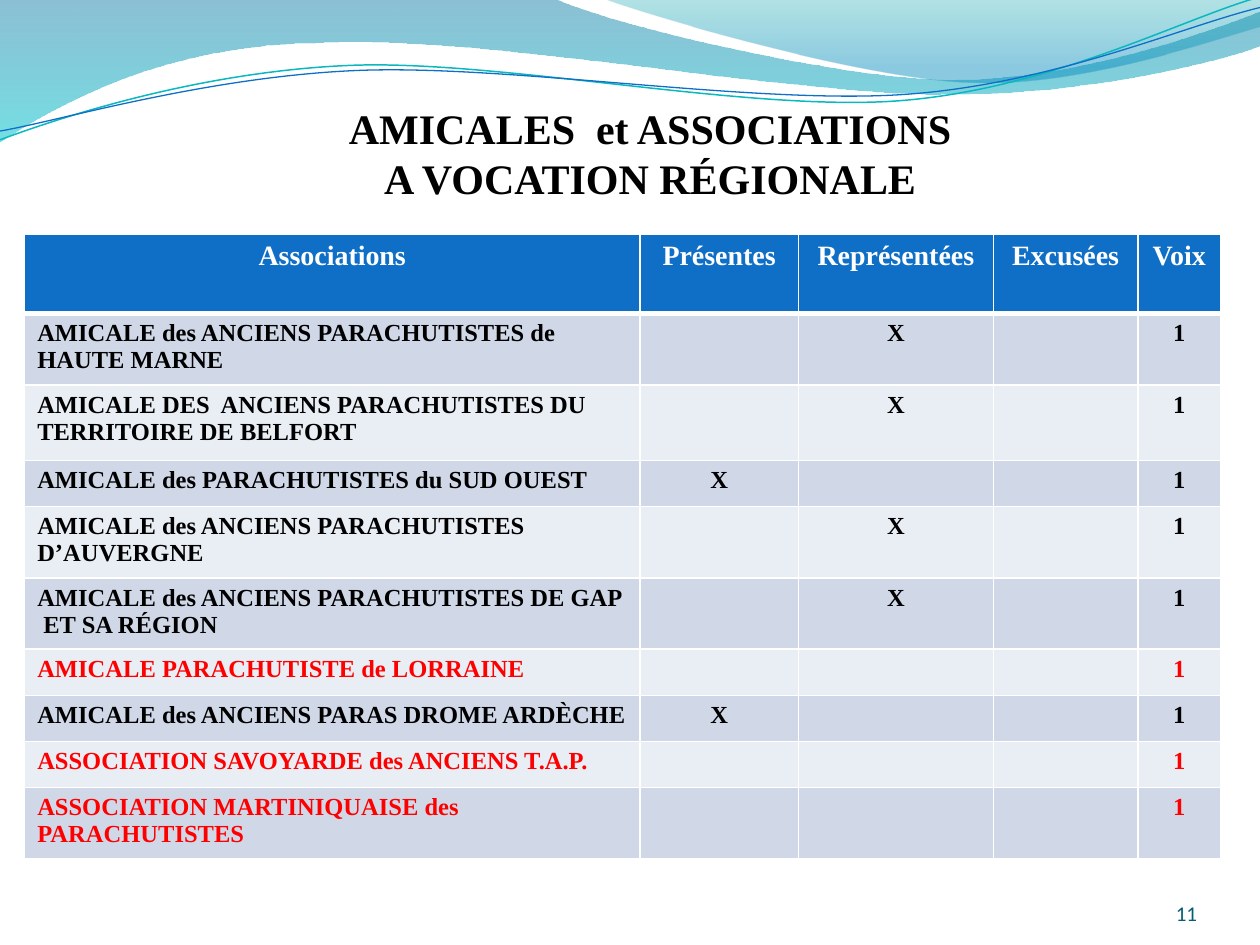
import math

import lxml.etree
import pptx
import pptx.dml.color
import pptx.enum.text
import pptx.oxml.ns
import pptx.util

Pt = pptx.util.Pt
ALIGN = pptx.enum.text.PP_ALIGN
ANCHOR = pptx.enum.text.MSO_ANCHOR
SERIF = "Times New Roman"
BLACK, WHITE, RED, BLUE = "000000", "FFFFFF", "FF0000", "0F6FC6"
BANDS = ("D0D8E8", "E9EDF4")

# Wave outlines in points: one pair ends a line, three pairs make a Bezier curve
BROAD_WAVE = [
    [(0, -0.7)], [(317, -0.7)],
    [(342.7, 12.2), (478, 45.4), (545.8, 45.4)],
    [(614.2, 45.4), (689.8, 18.7), (720, 6.5)], [(720.7, 25.9)],
    [(707.8, 31.7), (626.4, 54.7), (537.1, 54)],
    [(447.8, 54), (275, 20.2), (185, 24.5)],
    [(92.9, 25.2), (33.1, 59.8), (-0.7, 81.4)]]
RIGHT_WAVE = [
    [(344.9, -0.7)], [(366.5, 7.9), (491, 44.6), (553.7, 46.8)],
    [(616.3, 49.7), (691.9, 23), (720, 15.1)], [(720, 0)]]
TEAL_STRAND = [
    [(0, 79.9)], [(34.6, 67), (113.8, 41), (199.4, 37.4)],
    [(284.4, 33.8), (427, 64.1), (513.4, 57.6)],
    [(599.8, 51.1), (675.4, 10.8), (718.6, -1.4)]]
BLUE_STRAND = [
    [(0, 74.9)], [(33.8, 69.1), (118.1, 43.9), (203.8, 40.3)],
    [(290.2, 36.7), (429.8, 59.8), (516.2, 54)],
    [(601.9, 48.2), (675.4, 15.1), (720, 4.3)]]
STRAND_TILT = -2.7
STRAND_CENTER = (359.5, 41.5)

HEADINGS = ["Associations", "Présentes", "Représentées", "Excusées", "Voix"]
COLUMN_WIDTHS = [351.6, 90.6, 111.4, 82.6, 47.2]
HEADER_HEIGHT = 45.4
# Name, column of the cross (None when absent, shown in red), row height
ASSOCIATIONS = [
    ("AMICALE des ANCIENS PARACHUTISTES de HAUTE MARNE", 2, 40.7),
    ("AMICALE DES  ANCIENS PARACHUTISTES DU TERRITOIRE DE BELFORT", 2, 43.2),
    ("AMICALE des PARACHUTISTES du SUD OUEST", 1, 26.4),
    ("AMICALE des ANCIENS PARACHUTISTES D’AUVERGNE", 2, 40.7),
    ("AMICALE des ANCIENS PARACHUTISTES DE GAP  ET SA RÉGION", 2, 40.7),
    ("AMICALE PARACHUTISTE de LORRAINE", None, 26.4),
    ("AMICALE des ANCIENS PARAS DROME ARDÈCHE", 1, 26.4),
    ("ASSOCIATION SAVOYARDE des ANCIENS T.A.P.", None, 26.4),
    ("ASSOCIATION MARTINIQUAISE des PARACHUTISTES", None, 40.7),
]


def rgb(value):
    return pptx.dml.color.RGBColor.from_string(value)


def add_xml(parent, tag, **attributes):
    return lxml.etree.SubElement(parent, pptx.oxml.ns.qn(tag), attributes)


def apply(target, values):
    for name, value in values.items():
        setattr(target, name, value)


def write(paragraph, text, size, color, align, bold=True, font=SERIF):
    paragraph.alignment = align
    if not text:
        add_xml(paragraph._p, "a:endParaRPr", sz=str(size * 100))
        return
    run = paragraph.add_run()
    run.text = text
    apply(run.font, {"size": Pt(size), "bold": bold, "name": font})
    run.font.color.rgb = rgb(color)


def turn(point, degrees, center):
    angle = math.radians(degrees)
    dx, dy = point[0] - center[0], point[1] - center[1]
    return (center[0] + dx * math.cos(angle) - dy * math.sin(angle),
            center[1] + dx * math.sin(angle) + dy * math.cos(angle))


def add_outline(slide, segments, close):
    ends = [(Pt(x), Pt(y)) for x, y in (segment[-1] for segment in segments)]
    builder = slide.shapes.build_freeform(*ends[0])
    builder.add_line_segments(ends[1:], close=close)
    outline = builder.convert_to_shape()
    outline.shadow.inherit = False
    # Turn the straight segments that have control points into curves
    lines = list(outline._element.iter(pptx.oxml.ns.qn("a:lnTo")))
    for line, segment in zip(lines, segments[1:]):
        if len(segment) == 3:
            curve = lxml.etree.Element(pptx.oxml.ns.qn("a:cubicBezTo"))
            for x, y in segment:
                add_xml(curve, "a:pt", x=str(Pt(x) - outline.left),
                        y=str(Pt(y) - outline.top))
            line.getparent().replace(line, curve)
    return outline


def add_wave(slide, segments, stops):
    wave = add_outline(slide, segments, True)
    wave.line.fill.background()
    wave.fill.gradient()
    wave.fill.gradient_angle = 270
    for stop, (position, color, opacity) in zip(wave.fill.gradient_stops, stops):
        stop.position = position
        stop.color.rgb = rgb(color)
        tint = stop._gs.find(pptx.oxml.ns.qn("a:srgbClr"))
        add_xml(tint, "a:alpha", val=str(opacity * 1000))


def add_strand(slide, segments, color, width):
    level = [[turn(point, -STRAND_TILT, STRAND_CENTER) for point in segment]
             for segment in segments]
    strand = add_outline(slide, level, False)
    strand.rotation = STRAND_TILT
    strand.fill.background()
    strand.line.color.rgb = rgb(color)
    strand.line.width = Pt(width)


def add_title(slide, lines):
    title = slide.shapes.title
    apply(title, {"left": Pt(150.5), "top": Pt(54.7),
                  "width": Pt(442), "height": Pt(65.5)})
    frame = title.text_frame
    apply(frame, {"word_wrap": True, "vertical_anchor": ANCHOR.TOP,
                  "auto_size": pptx.enum.text.MSO_AUTO_SIZE.NONE})
    for index, line in enumerate(lines):
        paragraph = frame.add_paragraph() if index else frame.paragraphs[0]
        write(paragraph, line, 24, BLACK, ALIGN.CENTER)


def format_cell(cell, fill, top=1, bottom=1):
    properties = cell._tc.get_or_add_tcPr()
    for side, width in (("L", 1), ("R", 1), ("T", top), ("B", bottom)):
        border = add_xml(properties, f"a:ln{side}", w=str(Pt(width)))
        add_xml(add_xml(border, "a:solidFill"), "a:srgbClr", val=WHITE)
    cell.fill.solid()
    cell.fill.fore_color.rgb = rgb(fill)


def add_associations(slide):
    heights = [HEADER_HEIGHT] + [height for _, _, height in ASSOCIATIONS]
    table = slide.shapes.add_table(
        len(heights), len(HEADINGS), Pt(14.1), Pt(133.9),
        Pt(sum(COLUMN_WIDTHS)), Pt(sum(heights))).table
    for column, width in zip(table.columns, COLUMN_WIDTHS):
        column.width = Pt(width)
    for row, height in zip(table.rows, heights):
        row.height = Pt(height)

    # Header row
    for column, heading in enumerate(HEADINGS):
        cell = table.cell(0, column)
        format_cell(cell, BLUE, bottom=3)
        write(cell.text_frame.paragraphs[0], heading, 16, WHITE, ALIGN.CENTER)

    # One row per association, each with one vote
    for row, (name, cross, _) in enumerate(ASSOCIATIONS, start=1):
        color = RED if cross is None else BLACK
        marks = ["X" if column == cross else "" for column in (1, 2, 3)]
        for column, text in enumerate([name, *marks, "1"]):
            cell = table.cell(row, column)
            format_cell(cell, BANDS[(row - 1) % 2], top=3 if row == 1 else 1)
            write(cell.text_frame.paragraphs[0], text, 14, color,
                  ALIGN.CENTER if column else ALIGN.LEFT)


def add_page_number(slide, number):
    frame = slide.shapes.add_textbox(Pt(624), Pt(500.4), Pt(60), Pt(28.8)).text_frame
    apply(frame, {"word_wrap": True, "vertical_anchor": ANCHOR.BOTTOM,
                  "margin_left": 0, "margin_right": 0,
                  "margin_top": 0, "margin_bottom": 0})
    write(frame.paragraphs[0], number, 12, "045C75", ALIGN.RIGHT, False, "Calibri")


def main():
    deck = pptx.Presentation()
    apply(deck, {"slide_width": Pt(720), "slide_height": Pt(540)})
    slide = deck.slides.add_slide(deck.slide_layouts[5])

    # Decorative waves
    add_wave(slide, BROAD_WAVE, [(0, "0074A1", 45), (1, "00C6CF", 55)])
    add_wave(slide, RIGHT_WAVE, [(0, "00A1A9", 30), (0.8, "008BBF", 45)])
    add_strand(slide, TEAL_STRAND, "0AB8BF", 0.85)
    add_strand(slide, BLUE_STRAND, BLUE, 0.75)

    # Content
    add_title(slide, ["AMICALES  et ASSOCIATIONS", "A VOCATION RÉGIONALE"])
    add_associations(slide)
    add_page_number(slide, "11")
    deck.save("out.pptx")


if __name__ == "__main__":
    main()
